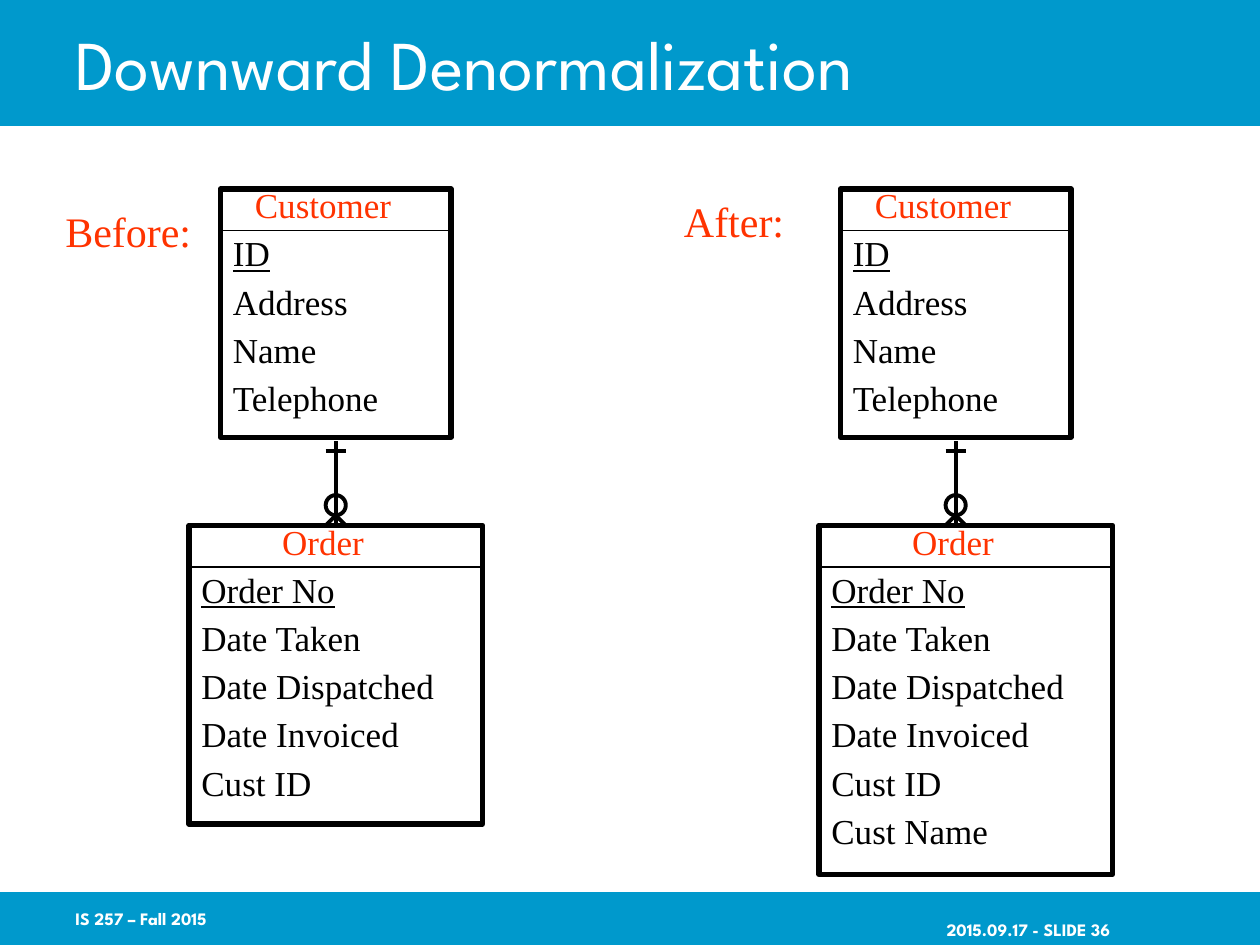
from dataclasses import dataclass

from lxml import etree
from pptx import Presentation
from pptx.dml.color import RGBColor as Rgb
from pptx.enum.shapes import MSO_CONNECTOR as Conn, MSO_SHAPE as Kind
from pptx.enum.text import MSO_ANCHOR as Anchor, PP_ALIGN as Align
from pptx.oxml.ns import qn
from pptx.util import Inches, Pt


@dataclass(frozen=True)
class Theme:
    blue: str = "0099CC"
    red: str = "FF3300"
    black: str = "000000"
    white: str = "FFFFFF"
    sans: str = "League Spartan"
    serif: str = "Times New Roman"
    title: int = 40
    label: int = 24
    body: int = 20
    foot: int = 10
    thin: float = 0.75
    link: float = 2.25
    frame: float = 3


def write(para, text, *, font, size, color, bold=False, under=False,
          align=Align.LEFT, ratio=None, before=0):
    para.alignment = align
    para.space_before = Pt(before)
    if ratio:
        para.line_spacing = ratio
    run = para.add_run()
    run.text = text
    face = run.font
    face.name, face.size, face.bold = font, Pt(size), bold
    face.underline = under
    face.color.rgb = Rgb.from_string(color)


class Deck:
    def __init__(self, theme, slide):
        self.theme = theme
        self.slide = slide

    def shape(self, kind, x, y, w, h, fill=None, line=None):
        item = self.slide.shapes.add_shape(
            kind, Inches(x), Inches(y), Inches(w), Inches(h))
        item.shadow.inherit = False
        if fill:
            item.fill.solid()
            item.fill.fore_color.rgb = Rgb.from_string(fill)
        else:
            item.fill.background()
        if line:
            item.line.color.rgb = Rgb.from_string(self.theme.black)
            item.line.width = Pt(line)
        else:
            item.line.fill.background()
        return item

    def line(self, x1, y1, x2, y2, width):
        item = self.slide.shapes.add_connector(
            Conn.STRAIGHT, Inches(x1), Inches(y1), Inches(x2), Inches(y2))
        item.line.color.rgb = Rgb.from_string(self.theme.black)
        item.line.width = Pt(width)
        props = item._element.find(qn("p:spPr"))
        etree.SubElement(props, qn("a:effectLst"))

    def text(self, x, y, w, h, text, *, anchor=Anchor.MIDDLE, wrap=True,
             top=0.05, right=0.1, **style):
        frame = self.slide.shapes.add_textbox(
            Inches(x), Inches(y), Inches(w), Inches(h)).text_frame
        frame.word_wrap = wrap
        frame.vertical_anchor = anchor
        frame.margin_top, frame.margin_right = Inches(top), Inches(right)
        write(frame.paragraphs[0], text, **style)

    def entity(self, x, y, w, h, name, fields):
        look = self.theme
        frame = self.shape(Kind.RECTANGLE, x, y, w, h,
                           line=look.frame).text_frame
        frame.word_wrap = True
        frame.vertical_anchor = Anchor.TOP
        # The wide right margin sets the heading left of centre
        frame.margin_right = Inches(0.3)
        base = dict(font=look.serif, size=look.body, ratio=0.7)
        write(frame.paragraphs[0], name, color=look.red,
              align=Align.CENTER, **base)
        for i, field in enumerate(fields):
            write(frame.add_paragraph(), field, color=look.black,
                  under=i == 0, before=10.75, **base)
        self.line(x, y + 0.33, x + w, y + 0.33, look.thin)

    def link(self, x, top, end):
        # One mandatory parent, zero or more children
        half, width = 0.08, self.theme.link
        fork = end - half
        self.line(x, top, x, end, width)
        for side in (-half, half):
            self.line(x, fork, x + side, end, width)
        self.line(x - half, top + half, x + half, top + half, width)
        self.shape(Kind.OVAL, x - half, fork - 2 * half, 2 * half, 2 * half,
                   line=width)

    def model(self, label, spot, left, shift, height, fields):
        look = self.theme
        wide = 1.83
        self.entity(left, 1.5, wide, 1.97, "Customer",
                    ["ID", "Address", "Name", "Telephone"])
        self.entity(left - shift, 4.17, 2.33, height, "Order", fields)
        self.link(left + wide / 2, 3.5, 4.17)
        self.text(*spot, 1.2, 0.5, label, anchor=Anchor.TOP, wrap=False,
                  font=look.serif, size=look.label, color=look.red)


def main():
    show = Presentation()
    show.slide_width, show.slide_height = Inches(10), Inches(7.5)
    look = Theme()
    deck = Deck(look, show.slides.add_slide(show.slide_layouts[6]))

    # Bands, title and footer
    for y, h in ((0, 1), (7.08, 0.42)):
        deck.shape(Kind.RECTANGLE, 0, y, 10, h, fill=look.blue)
    sans = dict(font=look.sans, color=look.white)
    deck.text(0.5, 0, 8.5, 1, "Downward Denormalization",
              size=look.title, **sans)
    foot = dict(size=look.foot, bold=True, **sans)
    deck.text(0.5, 7.08, 2.08, 0.42, "IS 257 – Fall 2015", **foot)
    deck.text(7.32, 7.08, 2.18, 0.42, "2015.09.17 - SLIDE 36",
              align=Align.RIGHT, top=0.23, right=0.69, **foot)

    # Data models before and after
    fields = ["Order No", "Date Taken", "Date Dispatched",
              "Date Invoiced", "Cust ID"]
    deck.model("Before:", (0.42, 1.58), 1.75, 0.25, 2.37, fields)
    deck.model("After:", (5.33, 1.5), 6.67, 0.17, 2.77,
               fields + ["Cust Name"])

    show.save("out.pptx")


if __name__ == "__main__":
    main()
